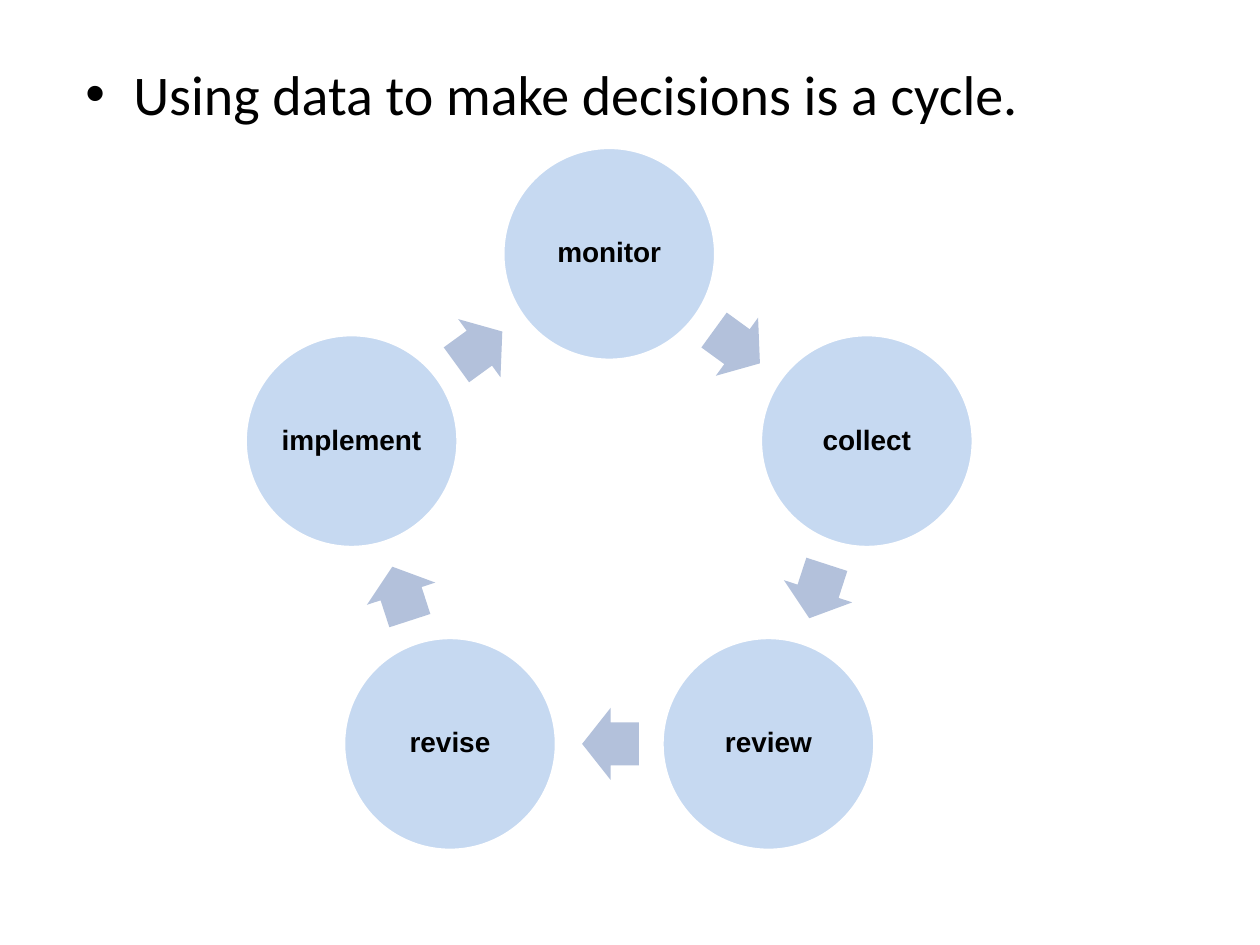
import math
from dataclasses import dataclass

from lxml import etree
from pptx import Presentation
from pptx import util as u
from pptx.dml.color import RGBColor
from pptx.enum import shapes, text
from pptx.oxml.ns import qn


@dataclass(frozen=True)
class Theme:
    circle: RGBColor = RGBColor.from_string("C6D9F1")
    arrow: RGBColor = RGBColor.from_string("B3C1DB")
    outline: RGBColor = RGBColor.from_string("FFFFFF")
    ink: RGBColor = RGBColor.from_string("000000")
    heading_font: str = "Calibri"
    heading_size: int = 32
    step_font: str = "Arial"
    step_size: int = 16


THEME = Theme()
WIDTH, HEIGHT = 10, 7.5
STEPS = ["monitor", "collect", "review", "revise", "implement"]
CENTRE_X, CENTRE_Y = 0.4835 * WIDTH, 0.5553 * HEIGHT
RADIUS = 0.215 * WIDTH
CIRCLE_SIZE = 0.169 * WIDTH
ARROW_SIZE = (0.045 * WIDTH, 0.076 * HEIGHT)
ARROW_SETBACK = 0.01


def style_text(paragraph, font, size, bold=False):
    paragraph.font.name = font
    paragraph.font.size = u.Pt(size)
    paragraph.font.bold = bold
    paragraph.font.color.rgb = THEME.ink


def add_heading(page, words):
    box = page.shapes.add_textbox(
        u.Inches(0.058 * WIDTH), u.Inches(0.056 * HEIGHT),
        u.Inches(0.9 * WIDTH), u.Inches(0.66 * HEIGHT))
    box.text_frame.word_wrap = True
    para = box.text_frame.paragraphs[0]
    para.text = words
    para.space_before = u.Pt(0.2 * THEME.heading_size)
    style_text(para, THEME.heading_font, THEME.heading_size)
    properties = para._p.get_or_add_pPr()
    indent = u.Inches(0.38)
    properties.set("marL", str(indent))
    properties.set("indent", str(-indent))
    bullet_font = etree.Element(qn("a:buFont"), typeface="Arial")
    bullet = etree.Element(qn("a:buChar"), char="•")
    properties.find(qn("a:spcBef")).addnext(bullet_font)
    bullet_font.addnext(bullet)


def add_centred(group, kind, x, y, width, height, fill):
    shape = group.shapes.add_shape(
        kind, u.Inches(x - width / 2), u.Inches(y - height / 2),
        u.Inches(width), u.Inches(height))
    shape.shadow.inherit = False
    shape.fill.solid()
    shape.fill.fore_color.rgb = fill
    return shape


def add_step(group, label, angle):
    circle = add_centred(
        group, shapes.MSO_SHAPE.OVAL,
        CENTRE_X + RADIUS * math.sin(angle), CENTRE_Y - RADIUS * math.cos(angle),
        CIRCLE_SIZE, CIRCLE_SIZE, THEME.circle)
    circle.line.color.rgb = THEME.outline
    circle.line.width = u.Pt(2)
    frame = circle.text_frame
    frame.word_wrap = True
    frame.vertical_anchor = text.MSO_ANCHOR.MIDDLE
    frame.margin_left = frame.margin_right = u.Inches(0.02)
    frame.margin_top = frame.margin_bottom = u.Inches(0.02)
    para = frame.paragraphs[0]
    para.text = label
    para.alignment = text.PP_ALIGN.CENTER
    para.line_spacing = 0.9
    style_text(para, THEME.step_font, THEME.step_size, bold=True)


def add_arrow(group, angle, distance):
    x = CENTRE_X + distance * math.sin(angle) - ARROW_SETBACK * math.cos(angle)
    y = CENTRE_Y - distance * math.cos(angle) - ARROW_SETBACK * math.sin(angle)
    arrow = add_centred(
        group, shapes.MSO_SHAPE.RIGHT_ARROW, x, y, *ARROW_SIZE, THEME.arrow)
    arrow.line.fill.background()
    arrow.adjustments[0] = 0.6
    arrow.adjustments[1] = 0.5
    arrow.rotation = round(math.degrees(angle))


def add_cycle(page, labels):
    group = page.shapes.add_group_shape()
    turn = math.tau / len(labels)
    for index, label in enumerate(labels):
        add_step(group, label, index * turn)
        add_arrow(group, (index + 0.5) * turn, RADIUS * math.cos(turn / 2))


def main():
    deck = Presentation()
    deck.slide_width, deck.slide_height = u.Inches(WIDTH), u.Inches(HEIGHT)
    page = deck.slides.add_slide(deck.slide_layouts[6])
    add_heading(page, "Using data to make decisions is a cycle.")
    add_cycle(page, STEPS)
    deck.save("out.pptx")


if __name__ == "__main__":
    main()
